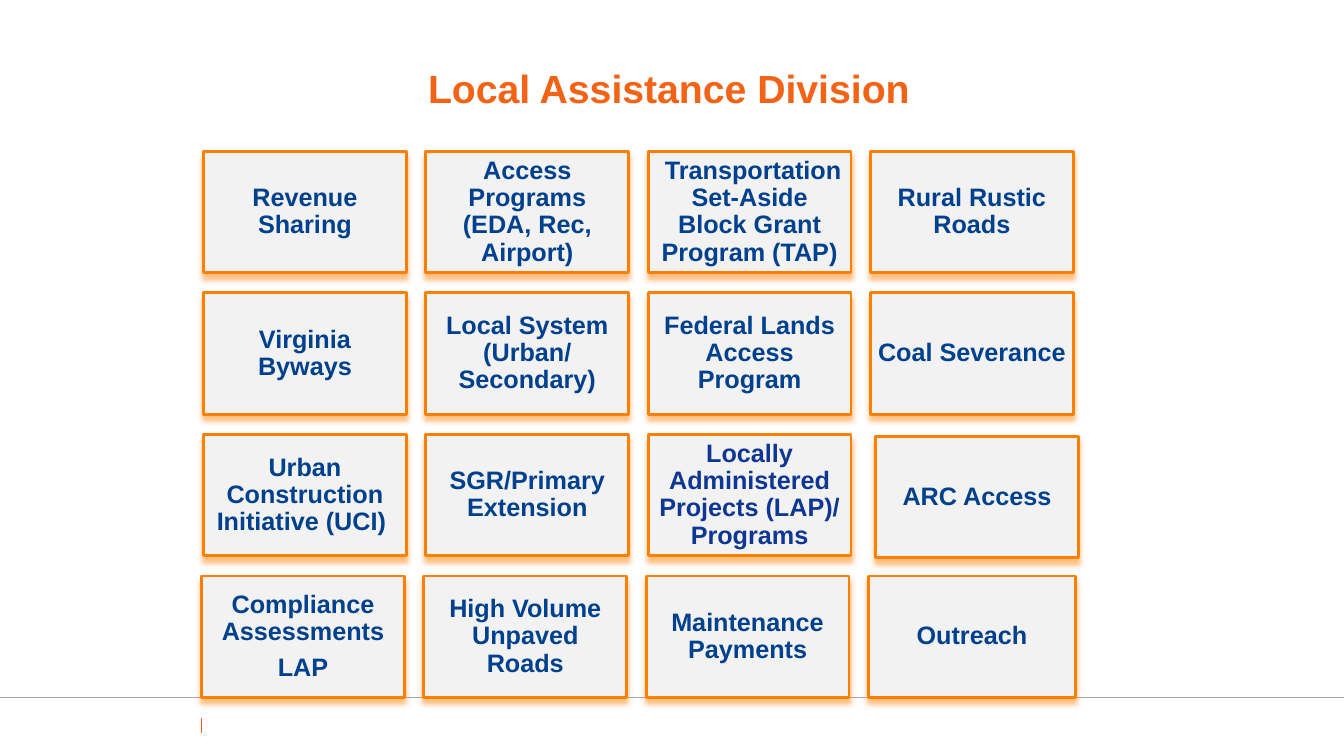
from lxml import etree
from pptx import Presentation
from pptx.dml.color import RGBColor
from pptx.enum.shapes import MSO_CONNECTOR, MSO_SHAPE
from pptx.enum.text import MSO_ANCHOR, PP_ALIGN
from pptx.oxml.ns import qn
from pptx.util import Pt

TITLE = "Local Assistance Division"
PROGRAMS = [
    ["Revenue Sharing", "Access Programs (EDA, Rec, Airport)",
     " Transportation Set-Aside Block Grant Program (TAP)", "Rural Rustic Roads"],
    ["Virginia Byways", "Local System (Urban/ Secondary)",
     "Federal Lands Access Program", "Coal Severance"],
    ["Urban Construction Initiative (UCI) ", "SGR/Primary Extension",
     "Locally Administered Projects (LAP)/\nPrograms", "ARC Access"],
    ["Compliance Assessments\nLAP", "High Volume Unpaved Roads",
     "Maintenance Payments", "Outreach"],
]
LAST_ROW = len(PROGRAMS) - 1
# Exceptions to the grid, by program: (dx, dy, extra width)
NUDGES = {"ARC Access": (3.6, 1.4, 0), "Outreach": (0, 0, 2.9)}
LAP_PROJECTS = PROGRAMS[2][2]

SLIDE_W, SLIDE_H = 960, 540
GRID_LEFT, GRID_TOP = 145.4, 108.1
PITCH_X, PITCH_Y = 158.8, 101.1
BOX_W, BOX_H = 144.9, 86.7
LAST_ROW_SHIFT = -1.4
INSET = 5.4

ORANGE, NAVY, LAP_BLUE = "FF8000", "00408D", "0E3793"


def rgb(color):
    return RGBColor.from_string(color)


def add_rule(x1, y1, x2, y2, color, weight):
    rule = slide.shapes.add_connector(
        MSO_CONNECTOR.STRAIGHT, Pt(x1), Pt(y1), Pt(x2), Pt(y2))
    rule.line.color.rgb = rgb(color)
    rule.line.width = Pt(weight)
    etree.SubElement(rule._element.spPr, qn("a:effectLst"))


def add_glow_below(box):
    """Cast a soft orange shadow straight down."""
    box.shadow.inherit = False
    effects = box._element.spPr.find(qn("a:effectLst"))
    shadow = etree.SubElement(
        effects, qn("a:outerShdw"), blurRad=str(Pt(4)), dist=str(Pt(4)),
        dir="5400000", algn="tl", rotWithShape="0")
    tint = etree.SubElement(shadow, qn("a:srgbClr"), val=ORANGE)
    etree.SubElement(tint, qn("a:alpha"), val="49000")


def write(frame, text, size, color):
    frame.text = text
    frame.word_wrap = True
    frame.vertical_anchor = MSO_ANCHOR.MIDDLE
    for paragraph in frame.paragraphs:
        paragraph.alignment = PP_ALIGN.CENTER
        font = paragraph.runs[0].font
        font.name, font.size, font.bold = "Arial", Pt(size), True
        font.color.rgb = rgb(color)


def add_program(row, column, program):
    dx, dy, extra = NUDGES.get(program, (0, 0, 0))
    if row == LAST_ROW:
        dx += LAST_ROW_SHIFT
    box = slide.shapes.add_shape(
        MSO_SHAPE.RECTANGLE,
        Pt(GRID_LEFT + column * PITCH_X + dx), Pt(GRID_TOP + row * PITCH_Y + dy),
        Pt(BOX_W + extra), Pt(BOX_H))
    box.fill.solid()
    box.fill.fore_color.rgb = rgb("F2F2F2")
    box.line.color.rgb = rgb(ORANGE)
    box.line.width = Pt(2)
    add_glow_below(box)

    frame = box.text_frame
    frame.margin_left = frame.margin_right = Pt(INSET)
    frame.margin_top = frame.margin_bottom = Pt(INSET)
    is_lap = program == LAP_PROJECTS
    write(frame, program, 18, LAP_BLUE if is_lap else NAVY)
    for paragraph in frame.paragraphs:
        paragraph.line_spacing = 0.9
        paragraph.space_after = Pt(0 if is_lap else 6.3)


prs = Presentation()
prs.slide_width, prs.slide_height = Pt(SLIDE_W), Pt(SLIDE_H)
slide = prs.slides.add_slide(prs.slide_layouts[6])

add_rule(0, 498.2, SLIDE_W, 498.2, "A6A6A6", 0.5)
add_rule(144, 513.2, 144, 523.6, "FD5816", 0.75)

for row, programs in enumerate(PROGRAMS):
    for column, program in enumerate(programs):
        add_program(row, column, program)

title = slide.shapes.add_textbox(Pt(72.7), Pt(18), Pt(810), Pt(90))
write(title.text_frame, TITLE, 28, "F36215")

prs.save("out.pptx")
